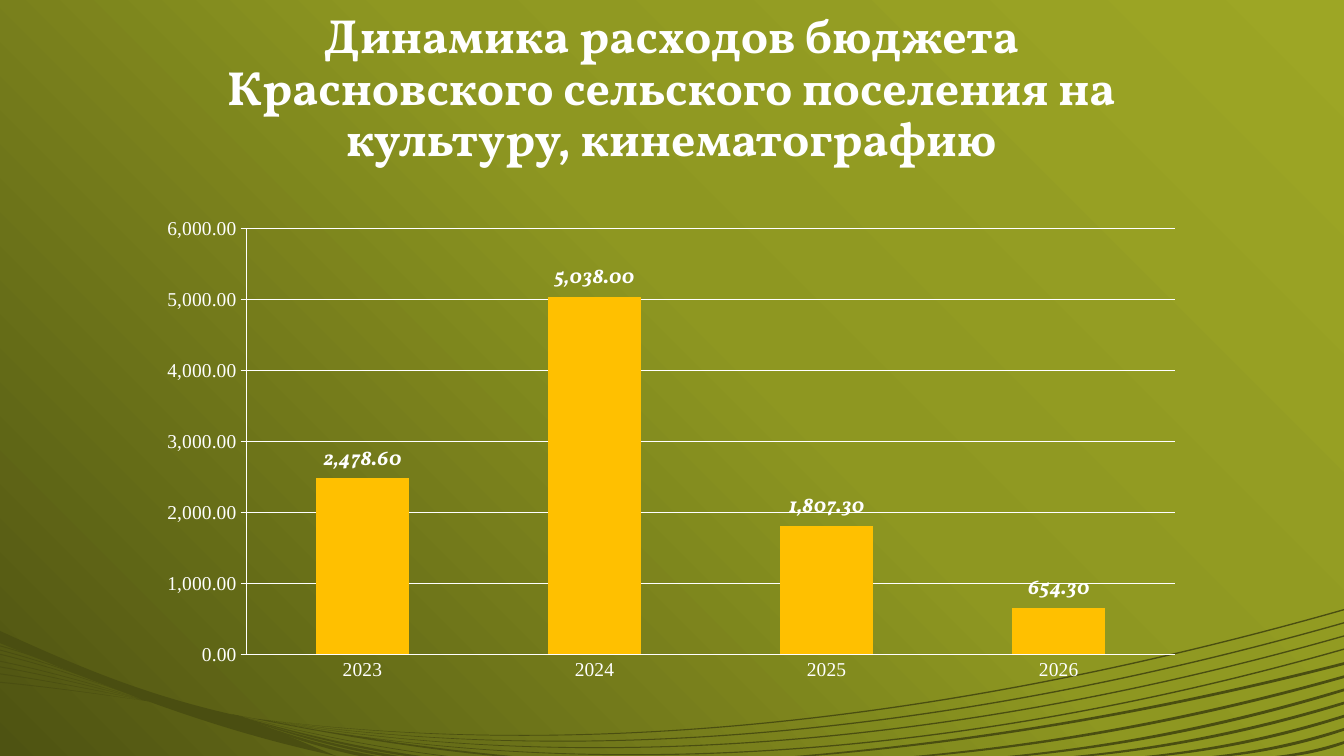
from copy import deepcopy

from lxml import etree
from pptx import Presentation
from pptx.chart.data import CategoryChartData as ChartData
from pptx.dml.color import RGBColor
from pptx.enum.chart import XL_CHART_TYPE as ChartType
from pptx.enum.chart import XL_LABEL_POSITION as LabelPos
from pptx.enum.chart import XL_TICK_MARK as Tick
from pptx.enum.text import MSO_ANCHOR as Anchor
from pptx.enum.text import PP_ALIGN as Align
from pptx.oxml.ns import qn
from pptx.util import Pt

WHITE = RGBColor(0xFF, 0xFF, 0xFF)
GOLD = RGBColor(0xFF, 0xC0, 0x00)
WAVE = RGBColor(0x4A, 0x4E, 0x11)
LIME = RGBColor(0x9D, 0xA6, 0x25)
OLIVE = RGBColor(0x8E, 0x97, 0x21)
DARK = RGBColor(0x4E, 0x53, 0x12)

WIDE, HIGH = 960, 540
HEAD_FONT = "Vollkorn"
AXIS_FONT = "Times New Roman"
FORMAT = "#,##0.00"
TITLE = ("Динамика расходов бюджета Красновского сельского поселения "
         "на культуру, кинематографию")
COSTS = {"2023": 2478.6, "2024": 5038, "2025": 1807.3, "2026": 654.3}
PLOT = {"x": 0.072, "y": 0.103, "w": 0.928, "h": 0.778}

STEP = 9.4  # gap between waves at the right edge
RIGHT_ENDS = (568, 653, 720, 767, 818, 866, 911)
LEFT_TOPS = (461, 464, 467, 472, 476, 481, 487)
ROOT_ENDS = ((257, 12), (274, 11), (290, 11), (316, 4), (353, 13))


def paint_back(slide):
    fill = slide.background.fill
    fill.gradient()
    fill.gradient_angle = 225
    last = fill.gradient_stops[1]._gs
    last.addprevious(deepcopy(last))
    stops = ((0, LIME), (0.45, OLIVE), (1, DARK))
    for stop, (place, color) in zip(fill.gradient_stops, stops):
        stop.position = place
        stop.color.rgb = color


def bend(lines):
    """Turn three straight segments into one cubic curve."""
    curve = etree.Element(qn("a:cubicBezTo"))
    lines[0].addprevious(curve)
    for line in lines:
        curve.append(line[0])
        line.getparent().remove(line)


def add_bands(slide, bands):
    """Fill the areas between pairs of cubic curves, as one shape."""
    form = None
    for upper, lower in bands:
        dots = [(Pt(x), Pt(y)) for x, y in upper + lower[::-1]]
        if form is None:
            form = slide.shapes.build_freeform(*dots[0], scale=1.0)
        else:
            form.move_to(*dots[0])
        form.add_line_segments(dots[1:], close=True)
    shape = form.convert_to_shape()
    shape.shadow.inherit = False
    shape.fill.solid()
    shape.fill.fore_color.rgb = WAVE
    shape.line.fill.background()

    outline = next(shape._element.iter(qn("a:path")))
    lines = outline.findall(qn("a:lnTo"))
    for i in range(0, len(lines), 7):
        bend(lines[i:i + 3])
        bend(lines[i + 4:i + 7])
    # Control points may lie below the slide; the shape ends at its edge.
    shape.height = Pt(HIGH) - shape.top
    outline.set("h", str(shape.height))


def right_edge(y, end):
    run, drop = WIDE - end, HIGH - y
    return [(WIDE, y), (WIDE - run / 3, y + drop * 0.5),
            (WIDE - run * 2 / 3, y + drop * 0.84), (end, HIGH)]


def long_edge(y, sag):
    return [(WIDE, y), (714, y + 70), (440, sag), (180, 513)]


def left_edge(y):
    rise = 501 - y
    return [(0, y), (35, y + rise * 0.25), (72, y + rise * 0.62), (106, 501)]


def root_edge(end):
    run = end - 165
    return [(165, 510), (165 + run * 0.33, 523),
            (165 + run * 0.67, 534), (end, HIGH)]


def add_waves(slide):
    bands = []
    for i in range(4):
        y, sag = 435 + STEP * i, 547 + 6 * i
        bands.append((long_edge(y, sag), long_edge(y + 1, sag + 1)))
    for i, end in enumerate(RIGHT_ENDS):
        y = 473 + STEP * i
        bands.append((right_edge(y, end), right_edge(y + 2, end + 13)))
    bands += [(left_edge(y), left_edge(y + 0.7)) for y in LEFT_TOPS]
    bands += [(root_edge(end + width), root_edge(end))
              for end, width in ROOT_ENDS]
    add_bands(slide, bands)
    crest = [(0, 450.7), (60, 478), (105, 497), (173, 512)]
    base = [(0, 459.4), (75, 490), (150, 521), (240, HIGH)]
    add_bands(slide, [(crest, base)])


def set_font(font, name, size, bold=False, italic=False):
    font.name = name
    font.size = Pt(size)
    font.bold = bold
    font.italic = italic
    font.color.rgb = WHITE


def set_title(slide):
    title = slide.shapes.title
    title.left, title.top = Pt(119.5), Pt(31.5)
    title.width, title.height = Pt(720), Pt(91.5)
    frame = title.text_frame
    frame.word_wrap = True
    frame.vertical_anchor = Anchor.BOTTOM
    par = frame.paragraphs[0]
    par.alignment = Align.CENTER
    par.line_spacing = 0.9
    run = par.add_run()
    run.text = TITLE
    set_font(run.font, HEAD_FONT, 34.2, bold=True)


def set_line(line):
    line.color.rgb = WHITE
    line.width = Pt(0.75)


def set_axis(axis, tick):
    axis.major_tick_mark = tick
    axis.minor_tick_mark = Tick.NONE
    set_font(axis.tick_labels.font, AXIS_FONT, 14)
    set_line(axis.format.line)


def place_plot(chart):
    area = chart._chartSpace.chart.plotArea
    for old in area.findall(qn("c:layout")):
        area.remove(old)
    layout = etree.Element(qn("c:layout"))
    area.insert(0, layout)
    manual = etree.SubElement(layout, qn("c:manualLayout"))
    parts = {"layoutTarget": "inner", "xMode": "edge", "yMode": "edge", **PLOT}
    for tag, value in parts.items():
        etree.SubElement(manual, qn("c:" + tag)).set("val", str(value))


def add_costs(slide):
    data = ChartData(number_format=FORMAT)
    data.categories = list(COSTS)
    data.add_series("", list(COSTS.values()))
    chart = slide.shapes.add_chart(ChartType.COLUMN_CLUSTERED, Pt(119.5), Pt(123),
                                   Pt(720), Pt(391), data).chart
    chart.has_title = False
    chart.has_legend = False
    set_font(chart.font, HEAD_FONT, 11.8)
    place_plot(chart)

    set_axis(chart.category_axis, Tick.NONE)
    scale = chart.value_axis
    set_axis(scale, Tick.CROSS)
    scale.minimum_scale, scale.maximum_scale, scale.major_unit = 0, 6000, 1000
    scale.tick_labels.number_format = FORMAT
    scale.tick_labels.number_format_is_linked = False
    set_line(scale.major_gridlines.format.line)

    plot = chart.plots[0]
    plot.vary_by_categories = False
    plot.gap_width = 150
    bars = plot.series[0]
    bars.format.fill.solid()
    bars.format.fill.fore_color.rgb = GOLD
    labels = bars.data_labels
    labels.show_value = True
    labels.position = LabelPos.OUTSIDE_END
    labels.number_format = FORMAT
    labels.number_format_is_linked = False
    set_font(labels.font, HEAD_FONT, 15, bold=True, italic=True)


def main():
    deck = Presentation()
    deck.slide_width, deck.slide_height = Pt(WIDE), Pt(HIGH)
    slide = deck.slides.add_slide(deck.slide_layouts[5])
    paint_back(slide)
    add_waves(slide)
    set_title(slide)
    add_costs(slide)
    deck.save("out.pptx")


if __name__ == "__main__":
    main()
